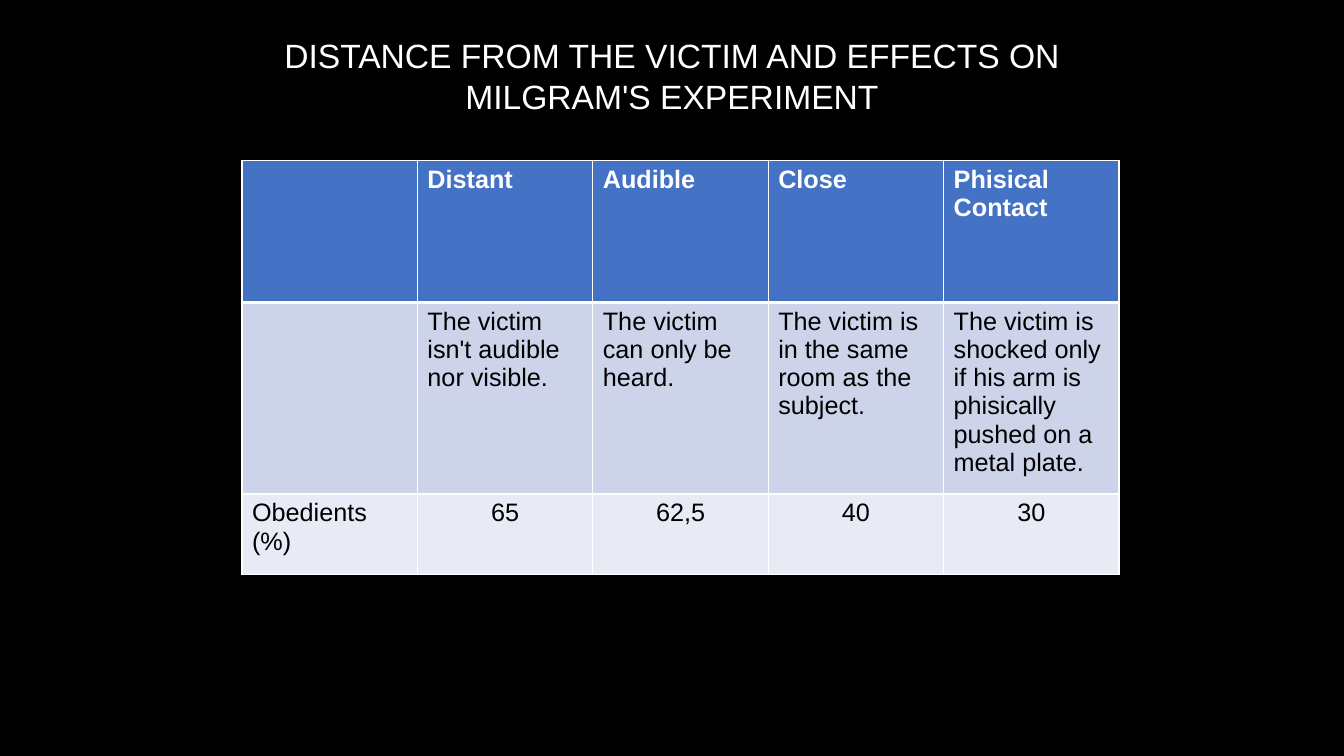
import pptx
import pptx.util
import pptx.dml.color
import pptx.enum.text
import pptx.oxml
import pptx.oxml.ns

theme = {
    "font": "Arial", "title": 24, "body": 18,
    "back": "000000", "light": "FFFFFF", "dark": "000000",
    "rows": ["4472C4", "CDD4EA", "E8EBF5"],
}
align = pptx.enum.text.PP_ALIGN
inch = pptx.util.Inches


def style(para, size, color, bold=False):
    for run in para.runs:
        run.font.name = theme["font"]
        run.font.size = pptx.util.Pt(size)
        run.font.bold = bold
        run.font.color.rgb = pptx.dml.color.RGBColor.from_string(color)


def edge(cell, side, width):
    line = pptx.oxml.parse_xml(
        f'<a:ln{side} {pptx.oxml.ns.nsdecls("a")} w="{pptx.util.Pt(width)}">'
        f'<a:solidFill><a:srgbClr val="{theme["light"]}"/></a:solidFill></a:ln{side}>')
    cell._tc.get_or_add_tcPr().append(line)


# Slide
deck = pptx.Presentation()
deck.slide_width, deck.slide_height = inch(13.33), inch(7.5)
slide = deck.slides.add_slide(deck.slide_layouts[6])
back = slide.background.fill
back.solid()
back.fore_color.rgb = pptx.dml.color.RGBColor.from_string(theme["back"])

# Title
title = slide.shapes.add_textbox(inch(1.89), inch(0.3), inch(9.55), inch(0.91)).text_frame
title.word_wrap = True
title.text = "DISTANCE FROM THE VICTIM AND EFFECTS ON MILGRAM'S EXPERIMENT"
title.paragraphs[0].alignment = align.CENTER
style(title.paragraphs[0], theme["title"], theme["light"])

# Table grid
data = [
    ["", "Distant", "Audible", "Close", "Phisical Contact"],
    ["", "The victim isn't audible nor visible.", "The victim can only be heard.",
     "The victim is in the same room as the subject.",
     "The victim is shocked only if his arm is phisically pushed on a metal plate."],
    ["Obedients (%)", "65", "62,5", "40", "30"],
]
wide = 1.74
high = [1.41, 1.89, 0.8]
table = slide.shapes.add_table(len(data), len(data[0]), inch(2.4), inch(1.59),
                               inch(wide * len(data[0])), inch(sum(high))).table
for col in table.columns:
    col.width = inch(wide)

# Table cells
for r, texts in enumerate(data):
    table.rows[r].height = inch(high[r])
    head = r == 0
    for c, text in enumerate(texts):
        cell = table.cell(r, c)
        # A thick rule parts the header from the body
        for side, width in [("L", 1), ("R", 1), ("T", 3 if r == 1 else 1), ("B", 3 if head else 1)]:
            edge(cell, side, width)
        cell.fill.solid()
        cell.fill.fore_color.rgb = pptx.dml.color.RGBColor.from_string(theme["rows"][r])
        cell.text_frame.text = text
        para = cell.text_frame.paragraphs[0]
        if r == 2 and c > 0:
            para.alignment = align.CENTER
        style(para, theme["body"], theme["light"] if head else theme["dark"], head)

deck.save("out.pptx")
